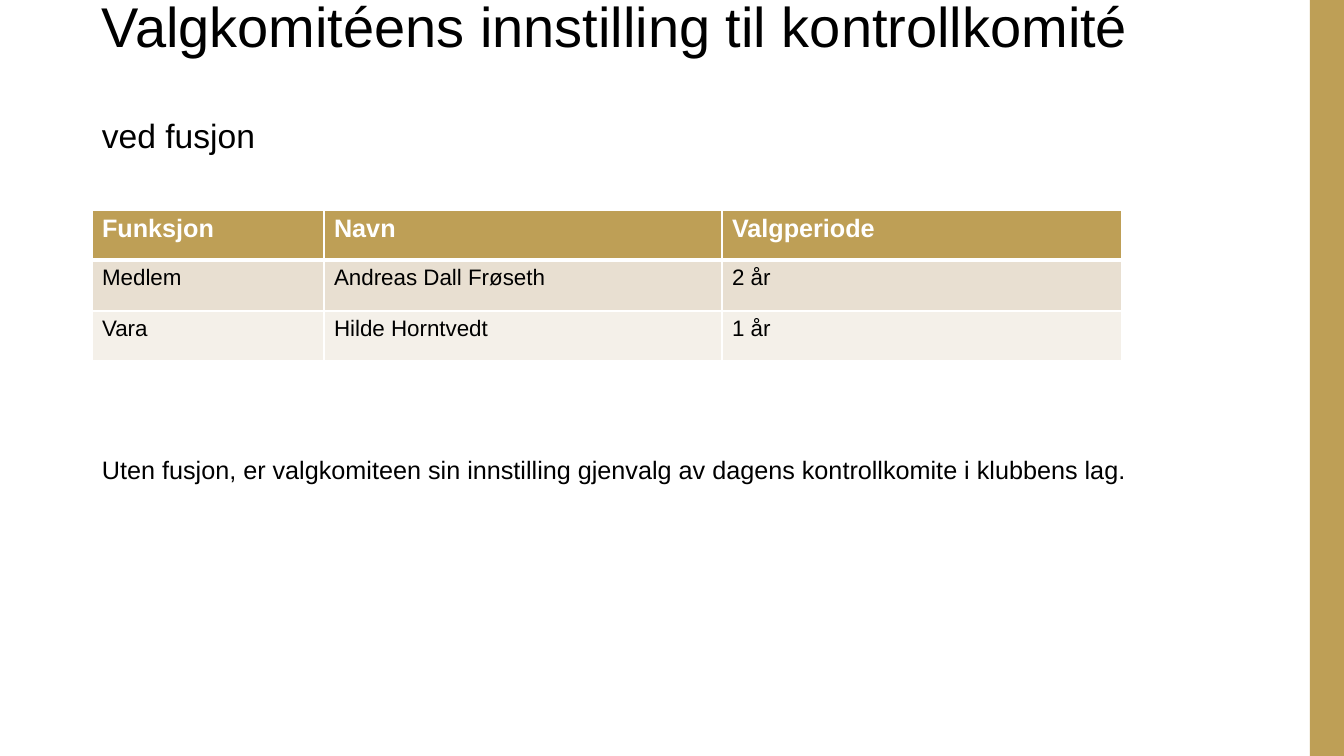
from lxml import etree
from pptx import Presentation
from pptx import util as u
from pptx.dml.color import RGBColor
from pptx.enum import shapes, text
from pptx.oxml import ns

GOLD = RGBColor(0xBE, 0x9F, 0x56)
SAND = RGBColor(0xE8, 0xDF, 0xD1)
CREAM = RGBColor(0xF4, 0xF0, 0xE9)
BLACK = RGBColor(0, 0, 0)
WHITE = RGBColor(255, 255, 255)


def px(n):
    return u.Emu(round(n * 914400 / 100.8))


class Deck:
    """Holds the style and the current slide, and draws each kind of element."""

    font = "Arial"

    def __init__(self):
        self.prs = Presentation()
        self.prs.slide_width, self.prs.slide_height = px(1344), px(756)
        self.slide = self.prs.slides.add_slide(self.prs.slide_layouts[6])

    def bar(self, x, y, w, h, color):
        bar = self.slide.shapes.add_shape(
            shapes.MSO_SHAPE.RECTANGLE, px(x), px(y), px(w), px(h))
        bar.shadow.inherit = False
        bar.fill.solid()
        bar.fill.fore_color.rgb = color
        bar.line.fill.background()

    def run(self, para, words, size, color=BLACK, bold=False):
        run = para.add_run()
        run.text = words
        font = run.font
        font.name, font.size, font.bold = self.font, u.Pt(size), bold
        font.color.rgb = color

    def text(self, x, y, w, h, lines, anchor=text.MSO_ANCHOR.TOP, pitch=1.0, gap=0):
        box = self.slide.shapes.add_textbox(px(x), px(y), px(w), px(h))
        frame = box.text_frame
        frame.word_wrap = True
        frame.vertical_anchor = anchor
        for i, (words, size) in enumerate(lines):
            para = frame.add_paragraph() if i else frame.paragraphs[0]
            para.line_spacing = pitch
            if i:
                para.space_before = u.Pt(gap)
            self.run(para, words, size)

    def edge(self, cell, side, width):
        props = cell._tc.get_or_add_tcPr()
        line = etree.Element(ns.qn("a:ln" + side), w=str(u.Pt(width)))
        fill = etree.SubElement(line, ns.qn("a:solidFill"))
        etree.SubElement(fill, ns.qn("a:srgbClr"), val=str(WHITE))
        props.insert("LRTB".index(side), line)

    def table(self, x, y, cols, rows, data):
        grid = self.slide.shapes.add_table(
            len(rows), len(cols), px(x), px(y), px(sum(cols)), px(sum(rows))).table
        for col, w in zip(grid.columns, cols):
            col.width = px(w)
        for i, (row, h) in enumerate(zip(grid.rows, rows)):
            row.height = px(h)
            head = i == 0
            for cell, words in zip(row.cells, data[i]):
                cell.fill.solid()
                cell.fill.fore_color.rgb = GOLD if head else (CREAM, SAND)[i % 2]
                for side in "LRTB":
                    thick = (head and side == "B") or (i == 1 and side == "T")
                    self.edge(cell, side, 3 if thick else 1)
                self.run(cell.text_frame.paragraphs[0], words,
                         18 if head else 16, WHITE if head else BLACK, head)


def main():
    deck = Deck()
    deck.bar(1310, 0, 34, 756, GOLD)
    deck.text(92, 41, 1060, 120,
              [("Valgkomitéens innstilling til kontrollkomité", 40), ("ved fusjon", 24)],
              text.MSO_ANCHOR.BOTTOM, 0.9, 43)
    deck.table(92, 210, (232, 398, 400), (50, 51, 50), (
        ("Funksjon", "Navn", "Valgperiode"),
        ("Medlem", "Andreas Dall Frøseth", "2 år"),
        ("Vara", "Hilde Horntvedt", "1 år")))
    deck.text(92, 449, 1116, 40, [(
        "Uten fusjon, er valgkomiteen sin innstilling gjenvalg av dagens "
        "kontrollkomite i klubbens lag.", 18)])
    deck.prs.save("out.pptx")


if __name__ == "__main__":
    main()
